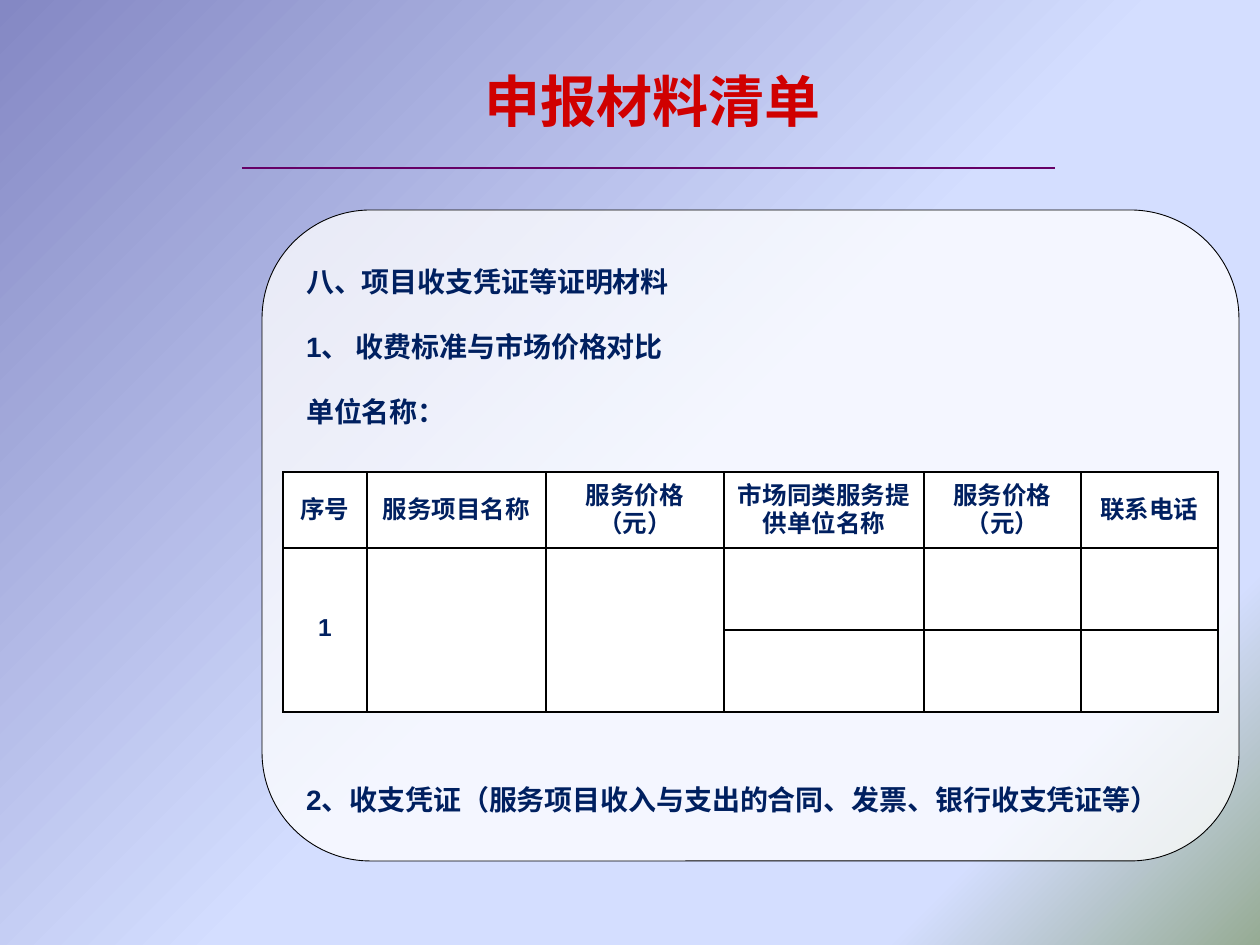
import pptx
import pptx.dml.color
import pptx.enum.shapes
import pptx.enum.text
import pptx.oxml
import pptx.oxml.ns
import pptx.util

PX = 914400 / 126
NAVY = "002060"

BACKGROUND = [(0, "8488C4"), (53, "D4DEFF"), (83, "D4DEFF"), (100, "96AB94")]
TITLE = "申报材料清单"
LINE_PITCH, LINE_GAP = 25, 6
TABLE_LINES = 5  # text lines left free for the table
# text, free lines above it
LINES = [
    ("八、项目收支凭证等证明材料", 0),
    ("1、 收费标准与市场价格对比", 0),
    ("单位名称：", 0),
    ("2、收支凭证（服务项目收入与支出的合同、发票、银行收支凭证等）", TABLE_LINES),
]
TABLE = [
    ["序号", "服务项目名称", "服务价格（元）", "市场同类服务提供单位名称",
     "服务价格（元）", "联系电话"],
    ["1", "", "", "", "", ""],
    ["", "", "", "", "", ""],
]
COL_WIDTHS = [84, 179, 178, 200, 157, 137]
ROW_HEIGHTS = [76, 82, 82]
MERGED_COLS = 3


def px(n):
    return round(n * PX)


def box(*sides):
    return [px(n) for n in sides]


def rgb(color):
    return pptx.dml.color.RGBColor.from_string(color)


def xml(tag, attrs="", inner=""):
    return pptx.oxml.parse_xml(
        f"<a:{tag} {pptx.oxml.ns.nsdecls('a')} {attrs}>{inner}</a:{tag}>")


def set_font(p, size, color, name):
    p.font.size = pptx.util.Pt(size)
    p.font.bold = True
    p.font.name = name
    p.font.color.rgb = rgb(color)


def set_background(slide):
    fill = slide.background.fill
    fill.gradient()
    fill.gradient_angle = 315
    stops = slide.element.find(".//" + pptx.oxml.ns.qn("a:gsLst"))
    for stop in list(stops):
        stops.remove(stop)
    for pos, color in BACKGROUND:
        stops.append(xml("gs", f'pos="{pos * 1000}"', f'<a:srgbClr val="{color}"/>'))


def add_heading(slide):
    line = slide.shapes.add_connector(
        pptx.enum.shapes.MSO_CONNECTOR.STRAIGHT, *box(242, 168, 1055, 168))
    line.line.color.rgb = rgb("660066")
    line.line.width = pptx.util.Pt(0.75)
    line._element.spPr.append(xml("effectLst"))

    tf = slide.shapes.add_textbox(*box(472, 32, 536, 136)).text_frame
    tf.word_wrap = True
    tf.vertical_anchor = pptx.enum.text.MSO_ANCHOR.MIDDLE
    p = tf.paragraphs[0]
    p.text = TITLE
    set_font(p, 32, "D00000", "Calibri")


def add_panel(slide):
    sp = slide.shapes.add_shape(
        pptx.enum.shapes.MSO_SHAPE.FLOWCHART_ALTERNATE_PROCESS, *box(262, 210, 977, 651))
    sp.shadow.inherit = False
    sp.fill.solid()
    sp.fill.fore_color.rgb = rgb("FFFFFF")
    sp._element.spPr.find(".//" + pptx.oxml.ns.qn("a:srgbClr")).append(
        xml("alpha", 'val="75000"'))
    sp.line.color.rgb = rgb("000000")
    sp.line.width = pptx.util.Pt(0.5)

    tf = sp.text_frame
    tf.word_wrap = True
    tf.vertical_anchor = pptx.enum.text.MSO_ANCHOR.MIDDLE
    for i, (text, free) in enumerate(LINES):
        p = tf.add_paragraph() if i else tf.paragraphs[0]
        p.text = text
        p.alignment = pptx.enum.text.PP_ALIGN.LEFT
        p.line_spacing = pptx.util.Pt(LINE_PITCH)
        p.space_after = pptx.util.Pt(LINE_GAP)
        if i:
            p.space_before = pptx.util.Pt(LINE_GAP + free * (LINE_PITCH + 2 * LINE_GAP))
        set_font(p, 16, NAVY, "Arial")


def style_cell(cell):
    cell.margin_left = cell.margin_right = px(9)
    cell.margin_top = cell.margin_bottom = 0
    cell.vertical_anchor = pptx.enum.text.MSO_ANCHOR.MIDDLE
    p = cell.text_frame.paragraphs[0]
    p.alignment = pptx.enum.text.PP_ALIGN.CENTER
    p.line_spacing = 0.8
    set_font(p, 14, NAVY, "Arial")
    tcPr = cell._tc.get_or_add_tcPr()
    for side in ("lnL", "lnR", "lnT", "lnB"):
        tcPr.append(xml(side, 'w="12700"',
                        '<a:solidFill><a:srgbClr val="000000"/></a:solidFill>'))
    cell.fill.solid()
    cell.fill.fore_color.rgb = rgb("FFFFFF")


def add_price_table(slide):
    table = slide.shapes.add_table(
        len(TABLE), len(COL_WIDTHS),
        *box(283, 472, sum(COL_WIDTHS), sum(ROW_HEIGHTS))).table
    for col, width in zip(table.columns, COL_WIDTHS):
        col.width = px(width)
    for row, height in zip(table.rows, ROW_HEIGHTS):
        row.height = px(height)
    for r, texts in enumerate(TABLE):
        for c, text in enumerate(texts):
            cell = table.cell(r, c)
            cell.text = text
            style_cell(cell)
    for c in range(MERGED_COLS):
        table.cell(1, c).merge(table.cell(2, c))


def main():
    prs = pptx.Presentation()
    prs.slide_width, prs.slide_height = px(1260), px(945)
    slide = prs.slides.add_slide(prs.slide_layouts[6])
    set_background(slide)
    add_heading(slide)
    add_panel(slide)
    add_price_table(slide)
    prs.save("out.pptx")


if __name__ == "__main__":
    main()
